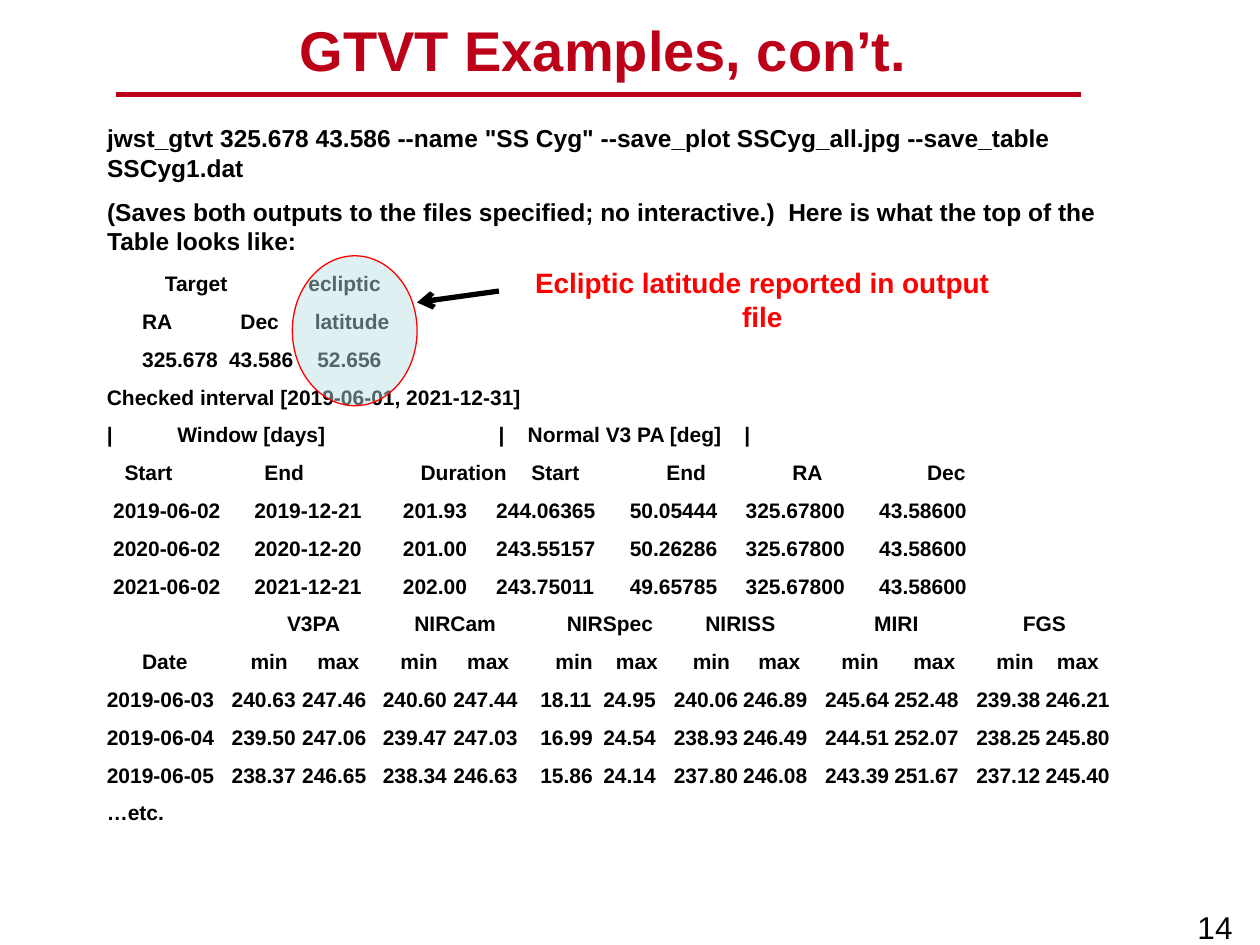
from dataclasses import dataclass

from lxml.etree import SubElement
from pptx import Presentation
from pptx.dml.color import RGBColor
from pptx.enum.shapes import MSO_CONNECTOR, MSO_SHAPE
from pptx.enum.text import MSO_ANCHOR, MSO_AUTO_SIZE, PP_ALIGN
from pptx.oxml.ns import qn
from pptx.util import Inches, Pt

CRIMSON, RED, BLACK, PALE_BLUE = "BB0018", "FF0000", "000000", "BBE0E3"


@dataclass
class Row:
    """One line of output; stops are the left edges of its cells in inches."""
    cells: list[str]
    stops: list[float]


def color(value: str) -> RGBColor:
    return RGBColor.from_string(value)


def set_font(para, size: float, value: str, bold: bool = False) -> None:
    font = para.font
    font.name, font.size, font.bold = "Arial", Pt(size), bold
    font.color.rgb = color(value)


def place(shape, left: float, top: float, width: float, height: float) -> None:
    shape.left, shape.top = Inches(left), Inches(top)
    shape.width, shape.height = Inches(width), Inches(height)


def add_line(page, start: tuple, end: tuple, value: str, arrow: bool = False) -> None:
    line = page.shapes.add_connector(
        MSO_CONNECTOR.STRAIGHT, *(Inches(length) for length in start + end))
    line.line.color.rgb = color(value)
    line.line.width = Pt(3)
    if arrow:
        SubElement(line.line._get_or_add_ln(), qn("a:tailEnd"), type="arrow")
    SubElement(line._element.spPr, qn("a:effectLst"))


def add_box(page, bounds: tuple, wrap: bool = True):
    box = page.shapes.add_textbox(*(Inches(length) for length in bounds))
    box.text_frame.word_wrap = wrap
    return box


def add_label(page, text: str, bounds: tuple, align, size: float, value: str,
              bold: bool = False, wrap: bool = True):
    box = add_box(page, bounds, wrap)
    para = box.text_frame.paragraphs[0]
    para.text, para.alignment = text, align
    set_font(para, size, value, bold)
    return box


def next_paragraph(frame, index: int, size: float):
    """Return the paragraph for a line, spaced in proportion to its text size."""
    para = frame.add_paragraph() if index else frame.paragraphs[0]
    para.space_before = Pt(round(size * 0.2, 1) if index else 0)
    para.space_after = Pt(round(size * 0.4, 1))
    return para


def write_prose(frame, lines: list[str], size: float) -> None:
    for index, line in enumerate(lines):
        para = next_paragraph(frame, index, size)
        para.text = line
        properties = para._p.get_or_add_pPr()
        properties.set("marL", "0")
        properties.set("indent", "0")
        SubElement(properties, qn("a:buNone"))
        set_font(para, size, BLACK, True)


def write_rows(frame, rows: list[Row], size: float) -> None:
    """Write rows whose cells are led by a tab unless they start at the margin."""
    for index, row in enumerate(rows):
        para = next_paragraph(frame, index, size)
        para.text = "".join(
            "\t" + cell if stop else cell for cell, stop in zip(row.cells, row.stops))
        stops = [stop for stop in row.stops if stop]
        if stops:
            tabs = SubElement(para._p.get_or_add_pPr(), qn("a:tabLst"))
            for stop in stops:
                SubElement(tabs, qn("a:tab"), pos=str(Inches(stop)), algn="l")
        set_font(para, size, BLACK, True)


# Column positions shared by several rows
WINDOW_STOPS = [0.05, 1.17, 2.35, 3.09, 4.15, 5.07, 6.13]
ANGLE_STOPS = [0, 0.99, 1.55, 2.19, 2.75, 3.44, 3.94, 4.5, 5.05, 5.7, 6.25, 6.9, 7.45]

WINDOWS = [
    "2019-06-02 2019-12-21 201.93 244.06365 50.05444 325.67800 43.58600",
    "2020-06-02 2020-12-20 201.00 243.55157 50.26286 325.67800 43.58600",
    "2021-06-02 2021-12-21 202.00 243.75011 49.65785 325.67800 43.58600",
]
ANGLES = [
    "2019-06-03 240.63 247.46 240.60 247.44 18.11 24.95 240.06 246.89 245.64 252.48 239.38 246.21",
    "2019-06-04 239.50 247.06 239.47 247.03 16.99 24.54 238.93 246.49 244.51 252.07 238.25 245.80",
    "2019-06-05 238.37 246.65 238.34 246.63 15.86 24.14 237.80 246.08 243.39 251.67 237.12 245.40",
]

PROSE = [
    'jwst_gtvt 325.678 43.586 --name "SS Cyg" --save_plot SSCyg_all.jpg '
    '--save_table SSCyg1.dat',
    "(Saves both outputs to the files specified; no interactive.)  "
    "Here is what the top of the Table looks like:",
]
ROWS = [
    Row(["Target", "ecliptic"], [0.46, 1.6]),
    Row(["RA", "Dec", "latitude"], [0.28, 1.06, 1.65]),
    Row(["325.678", "43.586", "52.656"], [0.28, 0.97, 1.67]),
    Row(["Checked interval [2019-06-01, 2021-12-31]"], [0]),
    Row(["|", "Window [days]", "|", "Normal V3 PA [deg]", "|"],
        [0, 0.56, 3.11, 3.34, 5.06]),
    Row(["Start", "End", "Duration", "Start", "End", "RA", "Dec"],
        [0.14, 1.25, 2.49, 3.37, 4.44, 5.44, 6.51]),
    *(Row(line.split(), WINDOW_STOPS) for line in WINDOWS),
    Row(["V3PA", "NIRCam", "NIRSpec", "NIRISS", "MIRI", "FGS"],
        [1.43, 2.44, 3.65, 4.75, 6.09, 7.27]),
    Row(["Date"] + ["min", "max"] * 6,
        [0.28, 1.14, 1.67, 2.33, 2.86, 3.56, 4.04, 4.65, 5.17, 5.83, 6.4, 7.06, 7.54]),
    *(Row(line.split(), ANGLE_STOPS) for line in ANGLES),
    Row(["…etc."], [0]),
]


def main() -> None:
    deck = Presentation()
    deck.slide_width, deck.slide_height = Inches(10), Inches(7.5)
    page = deck.slides.add_slide(deck.slide_layouts[1])

    # Title and rule
    add_line(page, (0.92, 0.75), (8.58, 0.75), CRIMSON)
    title = page.shapes.title
    place(title, 1, 0.17, 7.58, 0.44)
    title.text_frame.auto_size = MSO_AUTO_SIZE.NONE
    title.text_frame.vertical_anchor = MSO_ANCHOR.MIDDLE
    heading = title.text_frame.paragraphs[0]
    heading.text, heading.alignment = "GTVT Examples, con’t.", PP_ALIGN.CENTER
    set_font(heading, 32, CRIMSON, True)

    # Command and explanation
    body = page.placeholders[1]
    place(body, 0.75, 0.93, 8.5, 1.17)
    body.text_frame.auto_size = MSO_AUTO_SIZE.NONE
    write_prose(body.text_frame, PROSE, 14)

    # Output file, aligned with tab stops
    output = add_box(page, (0.75, 2.1, 8.5, 5.05))
    write_rows(output.text_frame, ROWS, 12)

    # Page number
    number = add_label(page, "14", (8.4, 7.15, 1.48, 0.31), PP_ALIGN.RIGHT, 18, BLACK)
    number.text_frame.margin_top = Inches(0.09)
    number.text_frame.paragraphs[0].line_spacing = 0.9

    # Ecliptic latitude highlight with its callout
    highlight = page.shapes.add_shape(
        MSO_SHAPE.OVAL, Inches(2.32), Inches(2.03), Inches(0.99), Inches(1.19))
    highlight.shadow.inherit = False
    highlight.fill.solid()
    highlight.fill.fore_color.rgb = color(PALE_BLUE)
    fill_color = highlight._element.spPr.find(qn("a:solidFill"))[0]
    SubElement(fill_color, qn("a:alpha"), val="46000")
    highlight.line.color.rgb = color(RED)
    highlight.line.width = Pt(0.75)
    callout = add_label(page, "Ecliptic latitude reported in output file",
                        (3.96, 2.06, 4.18, 0.37), PP_ALIGN.CENTER, 16, RED,
                        bold=True, wrap=False)
    callout.text_frame.auto_size = MSO_AUTO_SIZE.SHAPE_TO_FIT_TEXT
    add_line(page, (3.96, 2.31), (3.31, 2.4), BLACK, arrow=True)

    deck.save("out.pptx")


if __name__ == "__main__":
    main()
